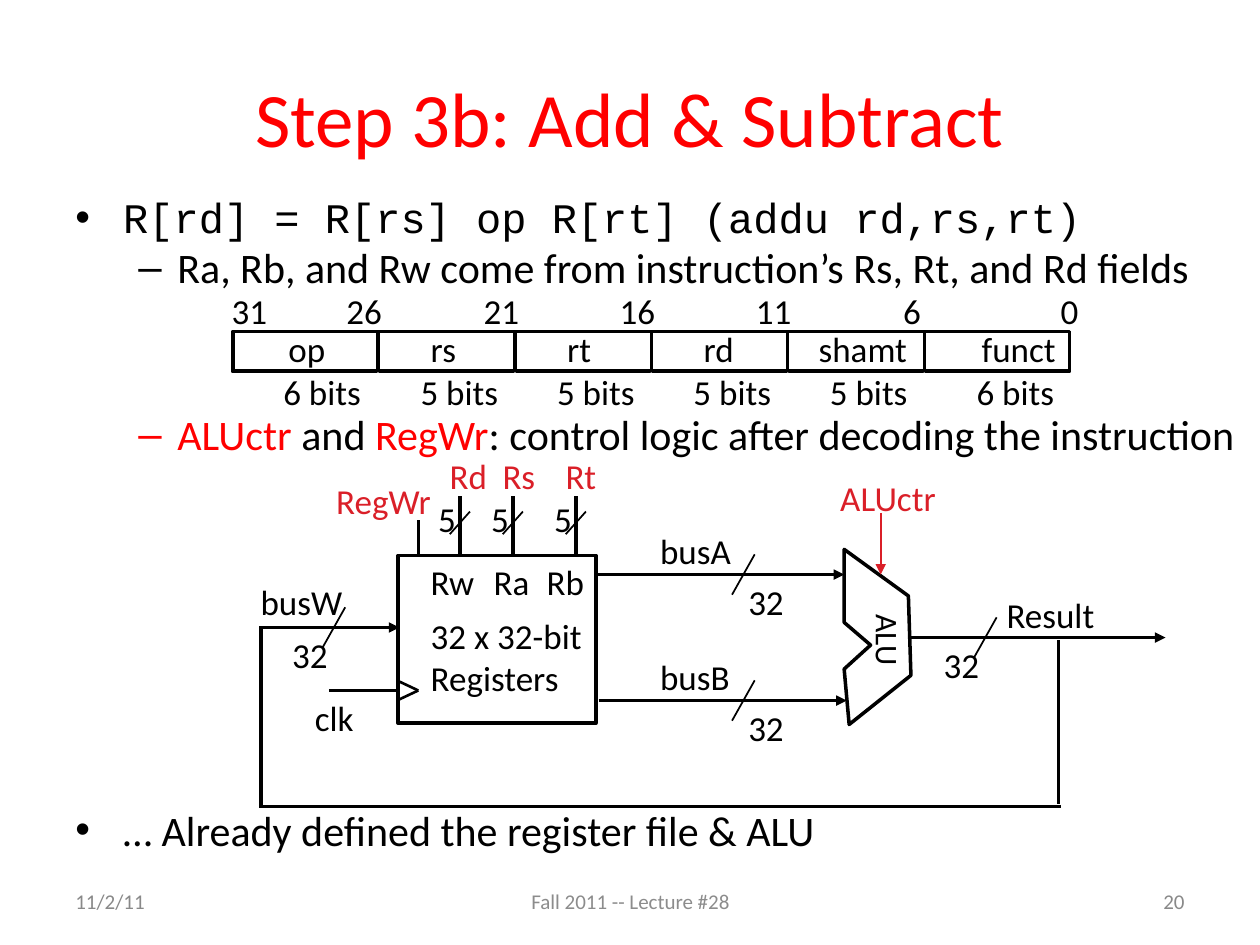
"""Build the lecture slide on the add and subtract datapath."""
from dataclasses import dataclass

from lxml import etree
from pptx import Presentation
from pptx import util as u
from pptx.dml.color import RGBColor
from pptx.enum import shapes, text
from pptx.oxml.ns import qn

Inches = u.Inches


@dataclass(frozen=True)
class Theme:
    ink: str = "000000"
    title_red: str = "FF0000"
    signal_red: str = "DA1F28"
    grey: str = "898989"
    centre_grey: str = "8C8C8C"
    font: str = "Calibri"
    code_font: str = "Courier New"
    title: int = 44
    body: int = 24
    label: int = 20
    small_label: int = 18
    footer: int = 12
    thick: float = 2
    medium: float = 1.5
    thin: float = 1


def write(para, words, *, size, color, font):
    span = para.add_run()
    span.text = words
    span.font.size = u.Pt(size)
    span.font.name = font
    span.font.color.rgb = RGBColor.from_string(color)


class Painter:
    def __init__(self, page, theme):
        self.page = page
        self.theme = theme

    def frame(self, left, top, width, height, wrap=True, anchor="TOP"):
        box = self.page.shapes.add_textbox(*map(Inches, (left, top, width, height)))
        box.text_frame.word_wrap = wrap
        box.text_frame.vertical_anchor = getattr(text.MSO_ANCHOR, anchor)
        return box

    def label(self, words, left, top, width, height=0.43, *, size=None, color=None,
              align="LEFT", wrap=False, anchor="TOP", rotation=0):
        box = self.frame(left, top, width, height, wrap, anchor)
        box.rotation = rotation
        for index, line in enumerate(words.split("\n")):
            paras = box.text_frame
            para = paras.add_paragraph() if index else paras.paragraphs[0]
            para.alignment = getattr(text.PP_ALIGN, align)
            write(para, line, size=size or self.theme.label,
                  color=color or self.theme.ink, font=self.theme.font)

    def bullet(self, para, mark, spans, *, margin, indent, before=0, font=None):
        para.space_before = u.Pt(before)
        props = para._p.get_or_add_pPr()
        props.set("marL", str(Inches(margin)))
        props.set("indent", str(Inches(indent)))
        etree.SubElement(props, qn("a:buFont")).set("typeface", "Arial")
        etree.SubElement(props, qn("a:buChar")).set("char", mark)
        for words, color in spans:
            write(para, words, size=self.theme.body, color=color,
                  font=font or self.theme.font)

    def outline(self, shape, weight):
        shape.shadow.inherit = False
        shape.fill.background()
        shape.line.color.rgb = RGBColor.from_string(self.theme.ink)
        shape.line.width = u.Pt(weight)

    def rect(self, left, top, width, height, weight):
        shape = self.page.shapes.add_shape(
            shapes.MSO_SHAPE.RECTANGLE, *map(Inches, (left, top, width, height)))
        self.outline(shape, weight)

    def polygon(self, points, weight):
        points = [(Inches(x), Inches(y)) for x, y in points]
        builder = self.page.shapes.build_freeform(*points[0])
        builder.add_line_segments(points[1:], close=True)
        self.outline(builder.convert_to_shape(), weight)

    def line(self, x1, y1, x2, y2, *, weight=None, color=None, arrow=False):
        wire = self.page.shapes.add_connector(
            shapes.MSO_CONNECTOR.STRAIGHT, *map(Inches, (x1, y1, x2, y2)))
        wire.line.color.rgb = RGBColor.from_string(color or self.theme.ink)
        wire.line.width = u.Pt(weight or self.theme.thick)
        if arrow:
            etree.SubElement(wire.line._get_or_add_ln(), qn("a:tailEnd")).set("type", "triangle")
        etree.SubElement(wire._element.spPr, qn("a:effectLst"))

    def slash(self, x, y, width=0.18, height=0.32):
        self.line(x + width / 2, y - height / 2, x - width / 2, y + height / 2,
                  weight=self.theme.thin)


def draw_text(paint):
    theme = paint.theme
    paras = paint.frame(0.5, 1.47, 9.5, 4.95).text_frame
    top = {"margin": 0.38, "indent": -0.38}
    sub = {"margin": 0.81, "indent": -0.31}
    paint.bullet(paras.paragraphs[0], "•",
                 [("R[rd] = R[rs] op R[rt] (addu rd,rs,rt)", theme.ink)],
                 font=theme.code_font, **top)
    paint.bullet(paras.add_paragraph(), "–",
                 [("Ra, Rb, and Rw come from instruction’s Rs, Rt, and Rd fields", theme.ink)],
                 **sub)
    paint.bullet(paras.add_paragraph(), "–",
                 [("ALUctr", theme.title_red), (" and ", theme.ink),
                  ("RegWr", theme.title_red),
                  (": control logic after decoding the instruction", theme.ink)],
                 before=66.7, **sub)
    paint.bullet(paras.add_paragraph(), "•",
                 [("… Already defined the register file & ALU", theme.ink)],
                 before=197, **top)
    paint.label("Step 3b: Add & Subtract", 0.5, 0.3, 9, 1.25, size=theme.title,
                color=theme.title_red, align="CENTER", wrap=True, anchor="MIDDLE")
    for words, left, width, align, color in (
            ("11/2/11", 0.5, 2.33, "LEFT", theme.grey),
            ("Fall 2011 -- Lecture #28", 3.42, 3.17, "CENTER", theme.centre_grey),
            ("20", 7.17, 2.33, "RIGHT", theme.grey)):
        paint.label(words, left, 6.95, width, 0.4, size=theme.footer, color=color,
                    align=align, wrap=True, anchor="MIDDLE")


def draw_instruction_format(paint):
    paint.rect(1.85, 2.63, 6.64, 0.31, paint.theme.thick)
    fields = (("op", 6, 0.35, 0.5), ("rs", 5, 0.31, 0.41), ("rt", 5, 0.31, 0.4),
              ("rd", 5, 0.31, 0.45), ("shamt", 5, 0.14, 0.92), ("funct", 6, 0.35, 0.82))
    for index, (name, bits, inset, width) in enumerate(fields):
        left = 3.01 + 1.083 * (index - 1) if index else 1.84
        wide = bits == 6
        paint.rect(left, 2.63, 1.15 if wide else 1.07, 0.32, paint.theme.thin)
        paint.label(name, left + inset, 2.55, width)
        paint.label(f"{bits} bits", left + (0.31 if wide else 0.23), 2.89, 0.83)
    for bit, left in ((31, 1.74), (26, 2.65), (21, 3.74), (16, 4.82),
                      (11, 5.9), (6, 7.07), (0, 8.32)):
        paint.label(str(bit), left, 2.25, 0.48 if bit > 9 else 0.34)


def draw_registers(paint):
    red = paint.theme.signal_red
    paint.rect(3.16, 4.41, 1.57, 1.33, paint.theme.thick)
    for x, field, field_width, port, port_left, port_width in (
            (3.65, "Rd", 0.5, "Rw", 3.32, 0.56),
            (4.07, "Rs", 0.46, "Ra", 3.82, 0.5),
            (4.57, "Rt", 0.46, "Rb", 4.24, 0.51)):
        paint.label(field, x - 0.18, 3.56, field_width, color=red)
        paint.line(x, 3.94, x, 4.41)
        paint.slash(x, 4.15, 0.16, 0.18)
        paint.label("5", x - 0.27, 3.9, 0.34)
        paint.label(port, port_left, 4.4, port_width)
    paint.label("32 x 32-bit\nRegisters", 3.32, 4.83, 1.41, 0.77)
    paint.label("RegWr", 2.57, 3.76, 0.97, color=red)
    paint.line(3.32, 4.13, 3.32, 4.41)
    paint.label("clk", 2.4, 5.48, 0.52)
    paint.line(2.61, 5.48, 3.14, 5.48)
    for y in (5.4, 5.56):
        paint.line(3.15, y, 3.32, 5.48, weight=paint.theme.medium)


def draw_datapath(paint):
    theme = paint.theme
    for name, name_left, name_top, name_width, start, end, y, cut, count_left in (
            ("busA", 5.14, 4.15, 0.78, 4.73, 6.7, 4.56, 5.9, 5.84),
            ("busB", 5.14, 5.15, 0.77, 4.75, 6.72, 5.56, 5.9, 5.84),
            ("busW", 1.97, 4.56, 0.86, 2.06, 3.17, 4.98, 2.65, 2.22),
            ("Result", 7.89, 4.66, 0.93, 7.22, 9.25, 5.06, 7.82, 7.39)):
        paint.line(start, y, end, y, arrow=True)
        paint.slash(cut, y)
        paint.label(name, name_left, name_top, name_width)
        paint.label("32", count_left, y, 0.48)
    paint.line(8.4, 5.08, 8.4, 6.38)
    paint.line(8.42, 6.4, 2.06, 6.4)
    paint.line(2.07, 6.41, 2.07, 4.97)
    paint.polygon(((6.7, 4.36), (7.21, 4.73), (7.23, 5.36), (6.74, 5.75),
                   (6.7, 5.31), (6.91, 5.12), (6.7, 4.94)), theme.thick)
    paint.label("ALU", 6.74, 4.89, 0.62, 0.4, size=theme.small_label, rotation=90)
    paint.label("ALUctr", 6.57, 3.73, 1.08, color=theme.signal_red)
    paint.line(6.99, 4.07, 6.99, 4.56, weight=theme.thin, color=theme.signal_red, arrow=True)


def main():
    deck = Presentation()
    deck.slide_width, deck.slide_height = Inches(10), Inches(7.5)
    paint = Painter(deck.slides.add_slide(deck.slide_layouts[6]), Theme())
    draw_text(paint)
    draw_instruction_format(paint)
    draw_registers(paint)
    draw_datapath(paint)
    deck.save("out.pptx")


if __name__ == "__main__":
    main()
